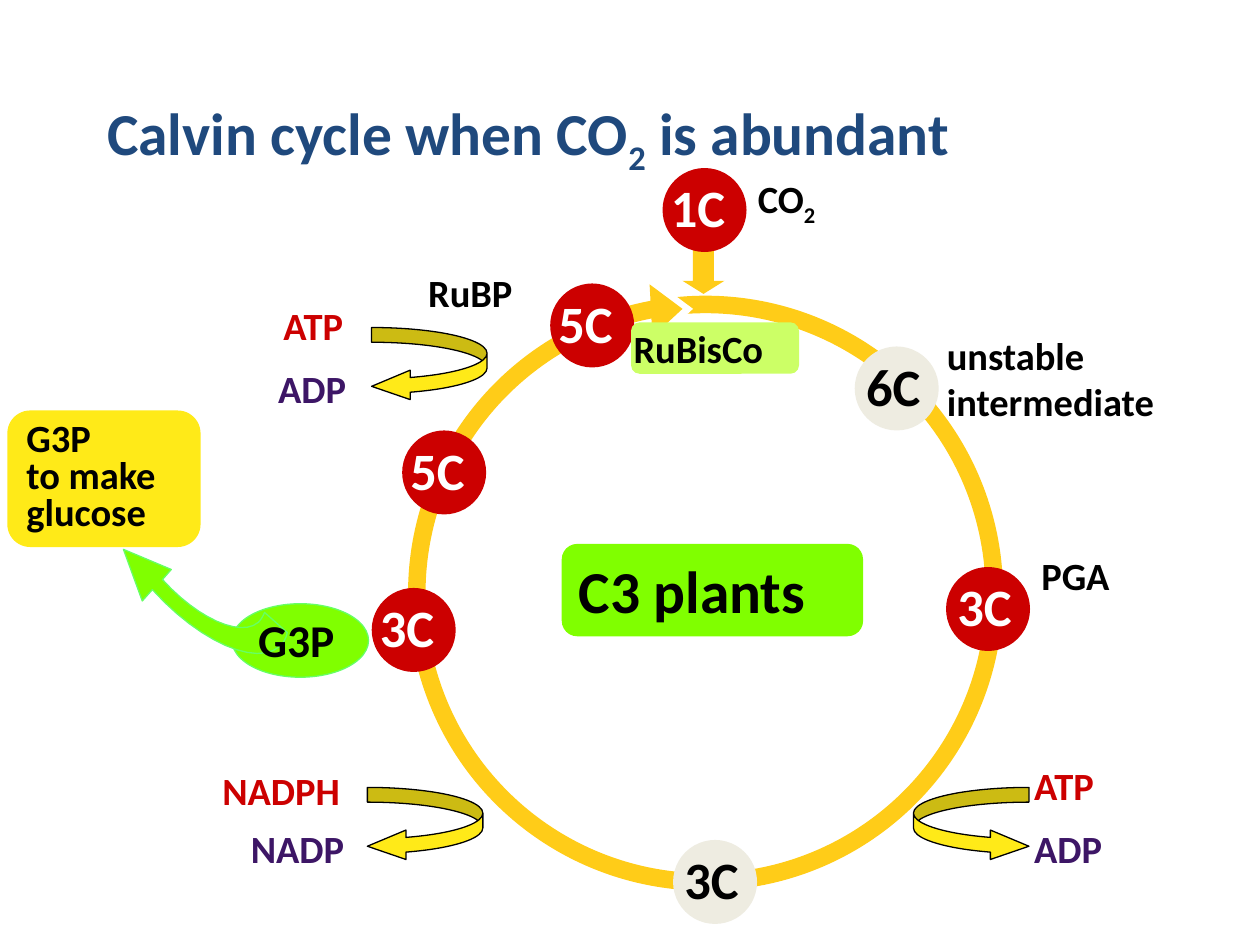
from typing import NamedTuple

from pptx import Presentation
from pptx.dml.color import RGBColor
from pptx.enum.shapes import MSO_SHAPE as Preset
from pptx.enum.text import MSO_ANCHOR as Anchor, MSO_AUTO_SIZE as AutoSize, PP_ALIGN as Align
from pptx.util import Inches, Pt

# Grid: 120 columns by 90 rows, twelve cells to the inch
CELL = Inches(1) / 12
FONT = "Calibri"
BLACK, WHITE, RED, PURPLE = "000000", "FFFFFF", "CC0000", "3D1666"
AMBER, YELLOW, GREEN, MINT, LIME = "FFCC18", "FFEA18", "80FF00", "66FF66", "CCFF66"
NAVY, STONE = "1F497D", "EEECE1"


class Area(NamedTuple):
    col: float
    row: float
    cols: float
    rows: float


class Carbon(NamedTuple):
    text: str
    col: float
    row: float
    fill: str = RED
    ink: str = WHITE
    text_shift: float = -0.4


class Label(NamedTuple):
    text: str
    area: Area
    ink: str = BLACK
    size: float = 22


class Turn(NamedTuple):
    col: float
    row: float
    mirrored: bool = True


CARBONS = [
    Carbon("6C", 81.4, 33, STONE, BLACK, -0.1),
    Carbon("1C", 63.1, 16),
    Carbon("5C", 52.4, 27),
    Carbon("3C", 90.1, 54, text_shift=-0.1),
    Carbon("3C", 64.1, 80, STONE, BLACK, -0.1),
    Carbon("3C", 35.4, 56),
    Carbon("5C", 38.3, 41),
]

LABELS = [
    Label("unstable\nintermediate", Area(89, 31, 24.2, 10)),
    Label("CO_2_", Area(71, 16.4, 9.4, 5.6)),
    Label("RuBP", Area(39.6, 25, 12.4, 5.6)),
    Label("PGA", Area(98, 52, 10.3, 5.6)),
    Label("ATP", Area(97.3, 72, 9.7, 5.6), RED),
    Label("ADP", Area(97.3, 78, 10.2, 5.6), PURPLE),
    Label("NADPH", Area(20, 72.4, 15.5, 5.6), RED),
    Label("NADP", Area(22.7, 78, 12.8, 5.6), PURPLE),
    Label("ATP", Area(25.8, 28.2, 9.7, 5.6), RED),
    Label("ADP", Area(25.3, 34.2, 10.2, 5.6), PURPLE),
    Label("G3P", Area(23.4, 57.7, 11, 6.4), size=26),
]

TURNS = [Turn(87, 75, False), Turn(35, 75), Turn(35.4, 31.2)]

# Outline of the G3P arrow in inches: two points are a line, four a curve
EXPORT_ARROW = [
    [(1.29, 4.6), (1.57, 4.91), (1.91, 5.06), (2.05, 4.94)],
    [(2.05, 4.94), (2.07, 4.92), (2.09, 4.89), (2.1, 4.86)],
    [(2.1, 4.86), (2.28, 5.02)],
    [(2.28, 5.02), (2.27, 5.07), (2.25, 5.1), (2.22, 5.13)],
    [(2.22, 5.13), (2.04, 5.29), (1.59, 5.1), (1.21, 4.68)],
    [(1.21, 4.68), (1.13, 4.77)],
    [(1.13, 4.77), (0.98, 4.36)],
    [(0.98, 4.36), (1.36, 4.52)],
]


def colour(value: str) -> RGBColor:
    return RGBColor.from_string(value)


def emu(area: Area) -> list[int]:
    return [round(length * CELL) for length in area]


def write(box, text: str, *, size: float = 22, ink: str = BLACK,
          spacing: float | None = None, inset: float | None = None) -> None:
    """Fill a box with bold text; underscores enclose a subscript."""
    frame = box.text_frame
    frame.word_wrap = False
    frame.auto_size = AutoSize.SHAPE_TO_FIT_TEXT
    frame.vertical_anchor = Anchor.MIDDLE
    if inset is not None:
        frame.margin_left = frame.margin_right = Inches(inset)
        frame.margin_top = frame.margin_bottom = Inches(inset)
    for index, line in enumerate(text.split("\n")):
        para = frame.add_paragraph() if index else frame.paragraphs[0]
        para.alignment = Align.LEFT
        if spacing:
            para.line_spacing = spacing
        for part, piece in enumerate(line.split("_")):
            if not piece:
                continue
            span = para.add_run()
            span.text = piece
            font = span.font
            font.name, font.size, font.bold = FONT, Pt(size), True
            font.color.rgb = colour(ink)
            if part % 2:
                font._element.set("baseline", "-25000")


def paint(shape, fill: str | None, line: str | None = None, width: float = 0.75) -> None:
    shape.shadow.inherit = False
    if fill:
        shape.fill.solid()
        shape.fill.fore_color.rgb = colour(fill)
    else:
        shape.fill.background()
    if line:
        shape.line.color.rgb = colour(line)
        shape.line.width = Pt(width)
    else:
        shape.line.fill.background()


def add_preset(page, preset: Preset, area: Area, fill: str | None, *, line: str | None = None,
               width: float = 0.75, adjust: tuple = (), rotation: float = 0):
    shape = page.shapes.add_shape(preset, *emu(area))
    paint(shape, fill, line, width)
    for index, value in enumerate(adjust):
        shape.adjustments[index] = value
    shape.rotation = rotation
    return shape


def add_label(page, label: Label) -> None:
    box = page.shapes.add_textbox(*emu(label.area))
    write(box, label.text, size=label.size, ink=label.ink)


def add_carbon(page, carbon: Carbon) -> None:
    add_preset(page, Preset.OVAL, Area(carbon.col, carbon.row, 8, 8), carbon.fill)
    area = Area(carbon.col + carbon.text_shift, carbon.row + 0.1, 8.8, 7.2)
    add_label(page, Label(carbon.text, area, carbon.ink, 30))


def add_turn(page, turn: Turn) -> None:
    shape = add_preset(page, Preset.CURVED_RIGHT_ARROW, Area(turn.col, turn.row, 11, 7), YELLOW,
                       line=BLACK, adjust=(0.2, 0.4, 0.524))
    if turn.mirrored:
        shape._element.spPr.xfrm.set("flipH", "1")


def trace(points: list, steps: int = 12) -> list:
    """Return the points that follow the start of a line or cubic curve."""
    if len(points) == 2:
        return points[1:]
    shares = [step / steps for step in range(1, steps + 1)]
    return [tuple((1 - t) ** 3 * a + 3 * (1 - t) ** 2 * t * b + 3 * (1 - t) * t ** 2 * c + t ** 3 * d
                  for a, b, c, d in zip(*points)) for t in shares]


def add_outline(page, segments: list, fill: str, line: str) -> None:
    # Freeform points are whole numbers, so inches become EMU first
    inches = segments[0][:1] + [point for part in segments for point in trace(part)]
    start, *others = [(Inches(x), Inches(y)) for x, y in inches]
    builder = page.shapes.build_freeform(*start)
    builder.add_line_segments(others, close=True)
    paint(builder.convert_to_shape(), fill, line)


def main() -> None:
    deck = Presentation()
    deck.slide_width, deck.slide_height = Inches(10), Inches(7.5)
    page = deck.slides.add_slide(deck.slide_layouts[5])

    # Title
    title = page.shapes.title
    title.left, title.top, title.width, title.height = emu(Area(9, 9, 96.8, 8))
    write(title, "Calvin cycle when CO_2_ is abundant", size=34, ink=NAVY)

    # Cycle ring and its arrows
    add_preset(page, Preset.DOWN_ARROW, Area(65, 23, 4, 5), AMBER, adjust=(0.5, 0.312))
    add_preset(page, Preset.OVAL, Area(39.7, 29, 55, 55), None, line=AMBER, width=10)
    for col, fill in ((63, WHITE), (62, AMBER)):
        add_preset(page, Preset.RIGHT_ARROW, Area(col, 27, 3, 5), fill,
                   adjust=(0.484, 1), rotation=356.9)

    # Sugar leaving the cycle
    add_preset(page, Preset.OVAL, Area(22.1, 57.5, 13, 7), GREEN, line=MINT)
    add_outline(page, EXPORT_ARROW, GREEN, MINT)

    # Molecules, energy turns and captions
    for carbon in CARBONS:
        add_carbon(page, carbon)
    for turn in TURNS:
        add_turn(page, turn)
    for label in LABELS:
        add_label(page, label)

    # Highlighted boxes
    for text, area, fill, options in (
        ("G3P\nto make\nglucose", Area(0.7, 39.1, 18.4, 13), YELLOW, {"spacing": 0.8}),
        ("RuBisCo", Area(60.1, 30.7, 16, 4.9), LIME, {"inset": 0}),
        ("C3 plants", Area(53.5, 51.8, 28.7, 8.8), GREEN, {"size": 34}),
    ):
        box = add_preset(page, Preset.ROUNDED_RECTANGLE, area, fill, adjust=(0.167,))
        write(box, text, **options)

    deck.save("out.pptx")


if __name__ == "__main__":
    main()
